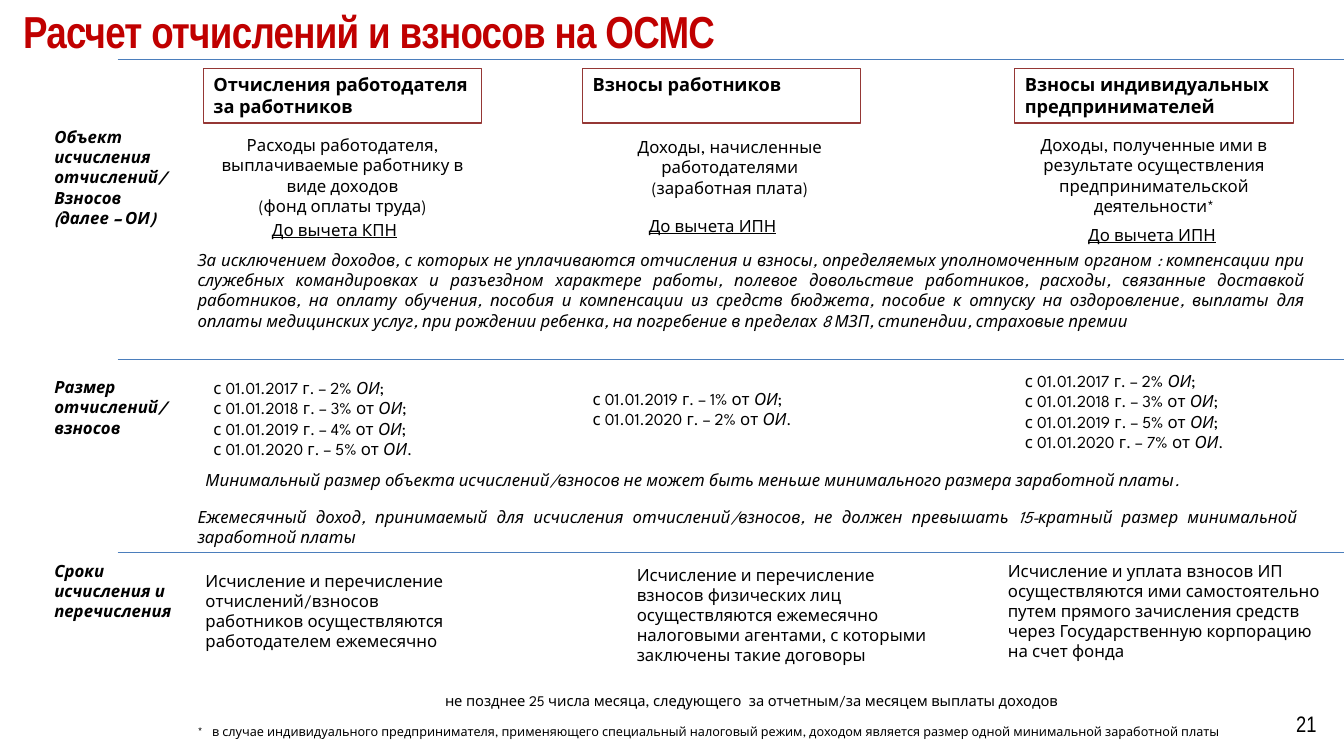
from lxml.etree import SubElement
from pptx import Presentation
from pptx.dml.color import RGBColor
from pptx.enum.shapes import MSO_CONNECTOR, MSO_SHAPE
from pptx.enum.text import MSO_ANCHOR, PP_ALIGN
from pptx.oxml.ns import qn
from pptx.util import Pt

BLACK = RGBColor(0x00, 0x00, 0x00)
TITLE_RED = RGBColor(0xC0, 0x00, 0x00)
FRAME_RED = RGBColor(0x95, 0x37, 0x35)
RULE_BLUE = RGBColor(0x4B, 0x7E, 0xBC)
BODY_FONT, TITLE_FONT = "League Spartan", "Arial Narrow"

SLIDE_W, SLIDE_H = 960, 540
COLUMN_W = 198.7
EMPLOYER_X, WORKER_X, ENTREPRENEUR_X = 145.4, 416.2, 725
NOTE_X = 134
LABEL_X, LABEL_W = 31.7, 102.2
RULE_X = 84


def format_text(shape, paragraphs, size=12, font=BODY_FONT, color=BLACK, bold=False,
                italic=False, underline=False, align=PP_ALIGN.LEFT,
                anchor=MSO_ANCHOR.TOP, spacing=None, hanging=None):
    """Each paragraph is a string or a list of (text, italic) runs."""
    frame = shape.text_frame
    frame.word_wrap = True
    frame.vertical_anchor = anchor
    for index, content in enumerate(paragraphs):
        paragraph = frame.paragraphs[0] if index == 0 else frame.add_paragraph()
        paragraph.alignment = align
        if hanging:
            properties = paragraph._p.get_or_add_pPr()
            properties.set("marL", str(Pt(hanging)))
            properties.set("indent", str(-Pt(hanging)))
        runs = [(content, italic)] if isinstance(content, str) else content
        for words, slanted in runs:
            run = paragraph.add_run()
            run.text = words
            run.font.name, run.font.size = font, Pt(size)
            run.font.bold, run.font.italic = bold, slanted
            run.font.underline = underline
            run.font.color.rgb = color
            if spacing:
                run._r.get_or_add_rPr().set("spc", str(round(spacing * 100)))


def add_text(slide, box, *paragraphs, **style):
    format_text(slide.shapes.add_textbox(*map(Pt, box)), paragraphs, **style)


def add_rule(slide, y):
    rule = slide.shapes.add_connector(
        MSO_CONNECTOR.STRAIGHT, Pt(RULE_X), Pt(y), Pt(SLIDE_W), Pt(y))
    rule.line.color.rgb = RULE_BLUE
    rule.line.width = Pt(0.75)
    SubElement(rule._element.spPr, qn("a:effectLst"))


def add_label(slide, top, height, *paragraphs):
    add_text(slide, (LABEL_X, top, LABEL_W, height), *paragraphs, bold=True, italic=True)


def add_title(slide, left, top, width, height):
    add_text(slide, (left, top, width, height), "Расчет отчислений и взносов на ОСМС",
             size=32, font=TITLE_FONT, color=TITLE_RED, bold=True, spacing=-0.5)


def add_payer(slide, left, top, width, height, payer):
    frame = slide.shapes.add_shape(
        MSO_SHAPE.RECTANGLE, *map(Pt, (left, top, width, height)))
    frame.shadow.inherit = False
    frame.fill.background()
    frame.line.color.rgb = FRAME_RED
    frame.line.width = Pt(0.75)
    format_text(frame, [payer], size=13, bold=True)


def add_base_section(slide, top):
    add_label(slide, top, 80, "Объект исчисления отчислений/", "Взносов (далее – ОИ)")
    # Base of each payer: left, offset, paragraphs
    bases = [
        (EMPLOYER_X, 5.8, ["Расходы работодателя, выплачиваемые работнику в виде доходов",
                           "(фонд оплаты труда)"]),
        (WORKER_X + 5.8, 7.2, ["Доходы, начисленные работодателями", "(заработная плата)"]),
        (ENTREPRENEUR_X, 5.8, ["Доходы, полученные ими в результате осуществления "
                               "предпринимательской деятельности*"]),
    ]
    for left, offset, base in bases:
        add_text(slide, (left, top + offset, COLUMN_W, 65.5), *base, align=PP_ALIGN.CENTER)
    # Tax the base is taken before
    taxes = [(139.7, 66.2, "КПН"), (409.7, 63.4, "ИПН"), (723.6, 69.8, "ИПН")]
    for left, offset, tax in taxes:
        add_text(slide, (left, top + offset, COLUMN_W, 21.6), f"До вычета {tax}",
                 underline=True, align=PP_ALIGN.CENTER)
    # Exempt income
    add_text(slide, (NOTE_X, top + 87.8, 805.7, 80),
             "За исключением доходов, с которых не уплачиваются отчисления и взносы, "
             "определяемых уполномоченным органом : компенсации при служебных командировках "
             "и разъездном характере работы, полевое довольствие работников, расходы, "
             "связанные доставкой работников, на оплату обучения, пособия и компенсации из "
             "средств бюджета, пособие к отпуску на оздоровление, выплаты для оплаты "
             "медицинских услуг, при рождении ребенка, на погребение в пределах 8 МЗП, "
             "стипендии, страховые премии", italic=True, align=PP_ALIGN.JUSTIFY)


def rate_lines(rates):
    last_year = max(rates)
    return [[(f"с 01.01.{year} г. – {rate}% " + ("" if year == 2017 else "от "), False),
             ("ОИ", True),
             ("." if year == last_year else ";", False)]
            for year, rate in rates.items()]


def add_rate_section(slide, top):
    add_rule(slide, top)
    add_label(slide, top + 8.7, 51, "Размер отчислений/", "взносов")
    schedules = [
        (EMPLOYER_X, 9.4, {2017: 2, 2018: 3, 2019: 4, 2020: 5}),
        (WORKER_X, 17.3, {2019: 1, 2020: 2}),
        (ENTREPRENEUR_X, 4.4, {2017: 2, 2018: 3, 2019: 5, 2020: 7}),
    ]
    for left, offset, rates in schedules:
        add_text(slide, (left, top + offset, COLUMN_W, 65.5), *rate_lines(rates))
    # Lower and upper limits
    limits = [
        (139.7, 74.9, 794.9, 21.6, "Минимальный размер объекта исчислений/взносов не может "
                                   "быть меньше минимального размера заработной платы."),
        (NOTE_X, 101.5, 800.6, 36, "Ежемесячный доход, принимаемый для исчисления "
                                   "отчислений/взносов, не должен превышать 15-кратный размер "
                                   "минимальной заработной платы"),
    ]
    for left, offset, width, height, limit in limits:
        add_text(slide, (left, top + offset, width, height), limit,
                 italic=True, align=PP_ALIGN.JUSTIFY)


def add_deadline_section(slide, top):
    add_rule(slide, top)
    add_label(slide, top + 2.2, 51, "Сроки исчисления и перечисления")
    procedures = [
        (139.7, 9.4, COLUMN_W, "Исчисление и перечисление отчислений/взносов работников "
                               "осуществляются работодателем ежемесячно"),
        (447.8, 5, 230.4, "Исчисление и перечисление взносов физических лиц осуществляются "
                          "ежемесячно налоговыми агентами, с которыми заключены такие "
                          "договоры"),
        (712.8, 2.2, 247.2, "Исчисление и уплата взносов ИП осуществляются ими "
                            "самостоятельно путем прямого зачисления средств через "
                            "Государственную корпорацию на счет фонда"),
    ]
    for left, offset, width, procedure in procedures:
        add_text(slide, (left, top + offset, width, 80), procedure)
    add_text(slide, (139.7, top + 95.8, 794.9, 20),
             "не позднее 25 числа месяца, следующего  за отчетным/за месяцем выплаты доходов",
             size=10.5, align=PP_ALIGN.CENTER)


def add_footer(slide, top):
    add_text(slide, (NOTE_X, top + 10.8, 805.7, 18),
             "*\tв случае индивидуального предпринимателя, применяющего специальный налоговый "
             "режим, доходом является размер одной минимальной заработной платы",
             size=9, hanging=10.4)
    add_text(slide, (723.6, top, 223.9, 28.8), "21", size=16, font=TITLE_FONT,
             align=PP_ALIGN.RIGHT, anchor=MSO_ANCHOR.MIDDLE)


def main():
    deck = Presentation()
    deck.slide_width, deck.slide_height = Pt(SLIDE_W), Pt(SLIDE_H)
    slide = deck.slides.add_slide(deck.slide_layouts[6])
    # Title and column headings
    add_title(slide, 9.4, -0.7, 668.2, 46)
    add_rule(slide, 42.5)
    for left, payer in [(EMPLOYER_X, "Отчисления работодателя за работников"),
                        (WORKER_X, "Взносы работников"),
                        (ENTREPRENEUR_X, "Взносы индивидуальных предпринимателей")]:
        add_payer(slide, left, 49, COLUMN_W, 38.9, payer)
    # Sections from top to bottom
    add_base_section(slide, 87.1)
    add_rate_section(slide, 257)
    add_deadline_section(slide, 394.6)
    add_footer(slide, 502.6)
    deck.save("out.pptx")


if __name__ == "__main__":
    main()
